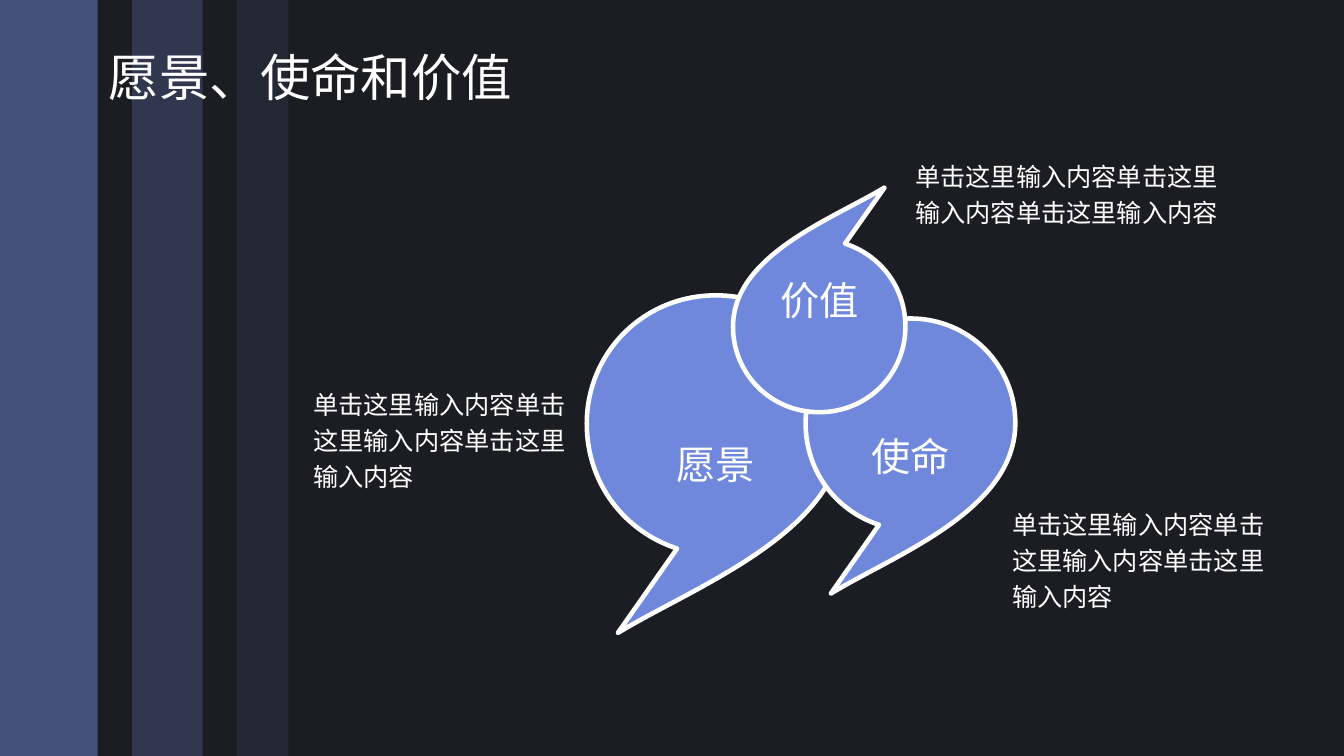
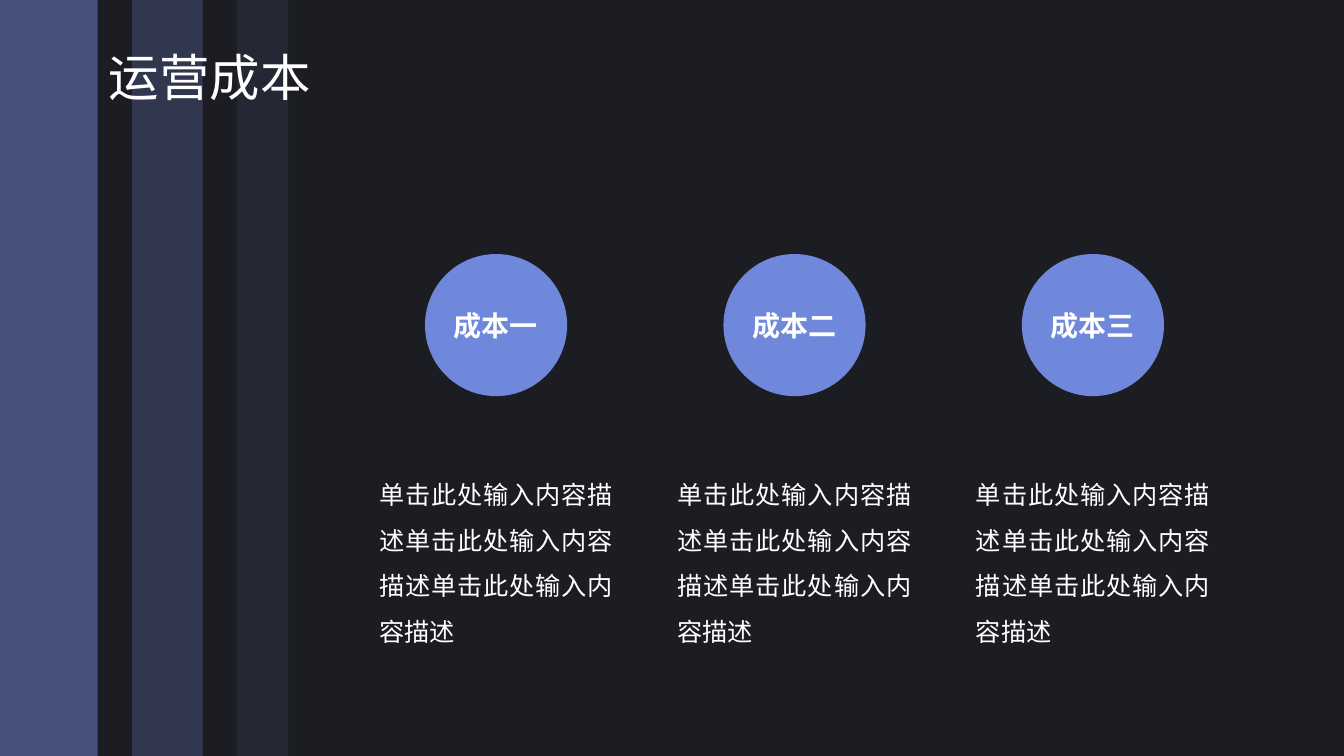
from lxml.etree import SubElement
from pptx import Presentation
from pptx.dml.color import RGBColor
from pptx.enum.shapes import MSO_SHAPE
from pptx.enum.text import MSO_ANCHOR, MSO_AUTO_SIZE, PP_ALIGN
from pptx.oxml.ns import qn
from pptx.util import Inches, Pt

BLACK = RGBColor(0x00, 0x00, 0x00)
NIGHT = RGBColor(0x1C, 0x1D, 0x22)
BAND = RGBColor(0x6E, 0x85, 0xD5)
ACCENT = RGBColor(0x6F, 0x88, 0xDC)
WHITE = RGBColor(0xFF, 0xFF, 0xFF)

SLIDE_W, SLIDE_H = 13.33, 7.5
FONT = {"name": "Times New Roman", "bold": False}
TITLE_FONT = {**FONT, "size": Pt(36)}
BODY_FONT = {**FONT, "size": Pt(18)}
BUBBLE_FONT = {**FONT, "size": Pt(28)}
COST_FONT = {**FONT, "size": Pt(20), "bold": True}
TITLE_PARAGRAPH = {"alignment": PP_ALIGN.LEFT, "line_spacing": 0.9}
CENTERED = {"alignment": PP_ALIGN.CENTER}
NOTE_PARAGRAPH = {"alignment": PP_ALIGN.LEFT, "line_spacing": 1.2}
COST_PARAGRAPH = {"alignment": PP_ALIGN.JUSTIFY, "line_spacing": 1.5}
MIDDLE = {"vertical_anchor": MSO_ANCHOR.MIDDLE, "auto_size": MSO_AUTO_SIZE.NONE}
WRAPPED = {"word_wrap": True}
NO_INSETS = {f"margin_{side}": 0 for side in ("left", "top", "right", "bottom")}

TITLE_BOX = (0.98, 0.35, 11.5, 0.9)
BACKDROP = [
    (0, SLIDE_W, NIGHT, 100),
    (0, 0.97, BAND, 50),
    (1.31, 0.7, BAND, 25),
    (2.35, 0.51, BAND, 10),
]

BUBBLE_START = (0.5, 0)
BUBBLE_CURVES = [
    ((0.22, 0), (0, 0.17), (0, 0.38)),
    ((0, 0.56), (0.15, 0.7), (0.35, 0.75)),
    ((0.12, 1), (0.12, 1), (0.12, 1)),
    ((0.42, 0.86), (1, 0.7), (1, 0.38)),
    ((1, 0.17), (0.78, 0), BUBBLE_START),
]
BUBBLES = [
    ("愿景", (5.82, 2.93, 2.56, 3.35), False),
    ("使命", (7.99, 3.16, 2.08, 2.73), False),
    ("价值", (7.27, 1.86, 1.71, 2.23), True),
]
NOTE_TEXT = "单击这里输入内容" * 3
NOTE_BOXES = [
    (8.98, 1.49, 3.33, 1.19),
    (9.94, 4.94, 2.82, 1.79),
    (3.01, 3.75, 2.74, 1.7),
]

COSTS = ["成本一", "成本二", "成本三"]
COST_TEXT = "单击此处输入内容描述" * 3
COSTS_LEFT, COSTS_TOP, COST_PITCH = 3.76, 2.52, 2.96
COST_W, COST_H = 2.32, 4.18
CIRCLE_SIZE, DESCRIPTION_OFFSET = 1.41, 2.09


def apply_format(target, values):
    """Set every attribute in values on the target."""
    for attribute, value in values.items():
        setattr(target, attribute, value)


def write_text(holder, text, font, paragraph_format, frame_format):
    """Write one formatted paragraph into a shape."""
    frame = holder.text_frame
    apply_format(frame, frame_format)
    paragraph = frame.paragraphs[0]
    apply_format(paragraph, paragraph_format)
    run = paragraph.add_run()
    run.text = text
    apply_format(run.font, font)
    run.font.color.rgb = WHITE


def paint(shape, color):
    """Give a shape a plain fill with neither line nor shadow."""
    shape.shadow.inherit = False
    shape.fill.solid()
    shape.fill.fore_color.rgb = color
    shape.line.fill.background()


def add_body(slide, box, text, paragraph_format, frame_format):
    """Add a wrapped body text in the given box."""
    body = slide.shapes.add_textbox(*map(Inches, box))
    write_text(body, text, BODY_FONT, paragraph_format, frame_format)


def style_layout(layout, slide):
    """Put the dark backdrop and its see-through bands on the layout."""
    layout.background.fill.solid()
    layout.background.fill.fore_color.rgb = BLACK
    for placeholder in list(layout.placeholders)[1:]:
        layout.shapes.element.remove(placeholder.element)
    for position, (left, width, color, opacity) in enumerate(BACKDROP, start=2):
        band = slide.shapes.add_shape(
            MSO_SHAPE.RECTANGLE, Inches(left), 0, Inches(width), Inches(SLIDE_H))
        paint(band, color)
        if opacity < 100:
            tint = band.element.find(".//" + qn("a:srgbClr"))
            SubElement(tint, qn("a:alpha")).set("val", str(opacity * 1000))
        layout.shapes.element.insert(position, band.element)


def add_title(slide, text):
    """Move the title placeholder into place and fill it."""
    title = slide.shapes.title
    left, top, width, height = map(Inches, TITLE_BOX)
    apply_format(title, {"left": left, "top": top, "width": width, "height": height})
    write_text(title, text, TITLE_FONT, TITLE_PARAGRAPH, MIDDLE)


def curve_outline(shape):
    """Turn each three straight segments of an outline into one Bezier curve."""
    outline = shape.element.find(".//" + qn("a:path"))
    segments = outline.findall(qn("a:lnTo"))
    for first in range(0, len(segments), 3):
        curve = SubElement(outline, qn("a:cubicBezTo"))
        segments[first].addprevious(curve)
        for segment in segments[first:first + 3]:
            curve.append(segment[0])
            outline.remove(segment)


def add_bubble(slide, label, box, turned):
    """Draw a labelled bubble in the box, optionally turned upside down."""
    left, top, width, height = box
    points = [BUBBLE_START] + [point for curve in BUBBLE_CURVES for point in curve]
    if turned:
        points = [(1 - x, 1 - y) for x, y in points]
    corners = [(Inches(left + x * width), Inches(top + y * height)) for x, y in points]
    builder = slide.shapes.build_freeform(*corners[0])
    builder.add_line_segments(corners[1:], close=True)
    bubble = builder.convert_to_shape()
    curve_outline(bubble)
    paint(bubble, ACCENT)
    bubble.line.color.rgb = WHITE
    bubble.line.width = Pt(3.25)
    write_text(bubble, label, BUBBLE_FONT, CENTERED, MIDDLE)


def fill_vision_slide(slide):
    """Place the three bubbles and their notes."""
    add_title(slide, "愿景、使命和价值")
    for label, box, turned in BUBBLES:
        add_bubble(slide, label, box, turned)
    for box in NOTE_BOXES:
        add_body(slide, box, NOTE_TEXT, NOTE_PARAGRAPH, WRAPPED)


def add_cost(slide, label, box):
    """Place a cost circle centred above its description."""
    left, top, width, height = box
    circle = slide.shapes.add_shape(
        MSO_SHAPE.OVAL, Inches(left + (width - CIRCLE_SIZE) / 2), Inches(top),
        Inches(CIRCLE_SIZE), Inches(CIRCLE_SIZE))
    paint(circle, ACCENT)
    write_text(circle, label, COST_FONT, CENTERED, {**MIDDLE, "word_wrap": False})
    description_box = (left, top + DESCRIPTION_OFFSET, width, height - DESCRIPTION_OFFSET)
    add_body(slide, description_box, COST_TEXT, COST_PARAGRAPH, {**WRAPPED, **NO_INSETS})


def fill_cost_slide(slide):
    """Place the cost columns at an equal pitch."""
    add_title(slide, "运营成本")
    for column, label in enumerate(COSTS):
        box = (COSTS_LEFT + column * COST_PITCH, COSTS_TOP, COST_W, COST_H)
        add_cost(slide, label, box)


def main():
    """Build and save the presentation."""
    deck = Presentation()
    deck.slide_width, deck.slide_height = Inches(SLIDE_W), Inches(SLIDE_H)
    layout = deck.slide_layouts[5]
    vision = deck.slides.add_slide(layout)
    style_layout(layout, vision)
    fill_vision_slide(vision)
    fill_cost_slide(deck.slides.add_slide(layout))
    deck.save("out.pptx")


if __name__ == "__main__":
    main()
